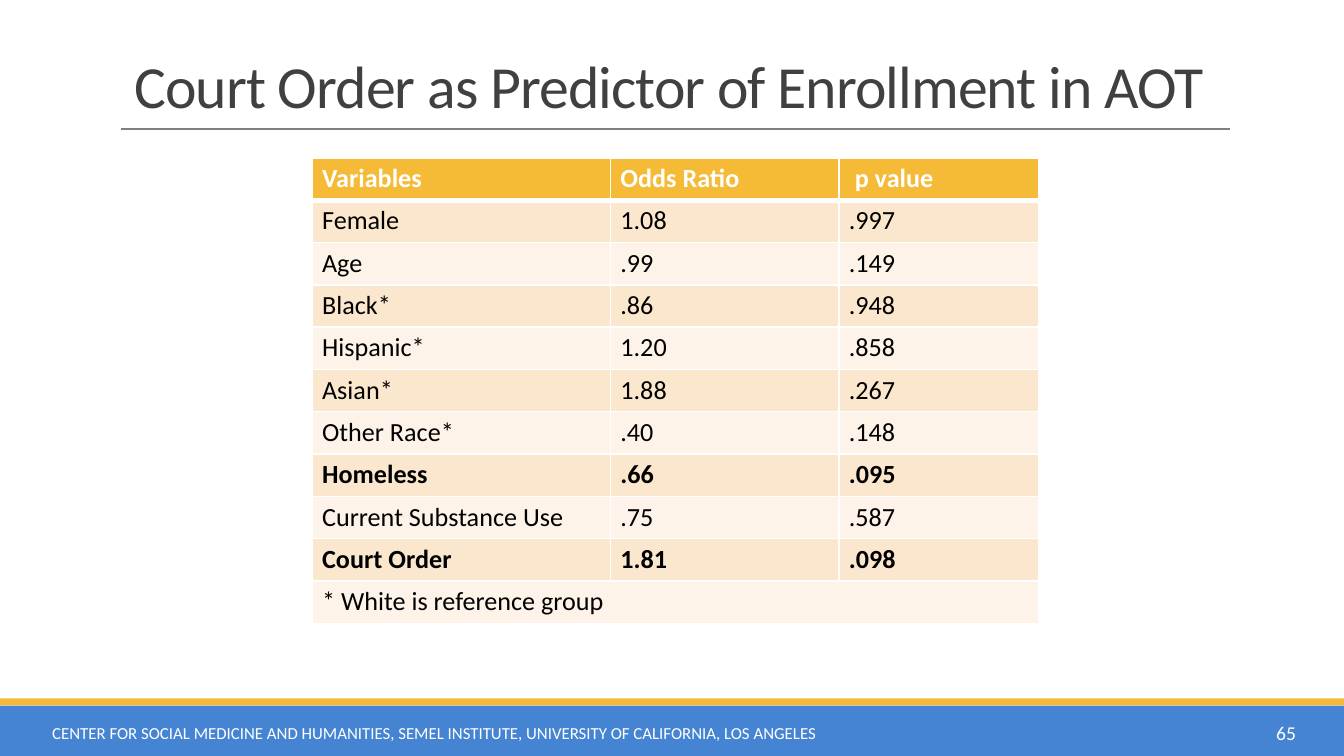
import pptx
import pptx.util
import pptx.dml.color
import pptx.enum.shapes
import pptx.enum.text
import pptx.oxml.ns
import lxml.etree

Pt = pptx.util.Pt
qn = pptx.oxml.ns.qn
ALIGN = pptx.enum.text.PP_ALIGN
ANCHOR = pptx.enum.text.MSO_ANCHOR

FONT = "Calibri"
WHITE, BLACK, GOLD = "FFFFFF", "000000", "F5BB36"
BANDS = ["FDF3E8", "FBE7CE"]
WIDTHS = [159.8, 122.4, 107.4]
ROW = 22.7
ROWS = [
    ["Variables", "Odds Ratio", " p value"],
    ["Female", "1.08", ".997"],
    ["Age", ".99", ".149"],
    ["Black*", ".86", ".948"],
    ["Hispanic*", "1.20", ".858"],
    ["Asian*", "1.88", ".267"],
    ["Other Race*", ".40", ".148"],
    ["Homeless", ".66", ".095"],
    ["Current Substance Use", ".75", ".587"],
    ["Court Order", "1.81", ".098"],
    ["* White is reference group", "", ""],
]
STRONG = {"Variables", "Homeless", "Court Order"}


def color(code):
    return pptx.dml.color.RGBColor.from_string(code)


def paint(fill, code):
    fill.solid()
    fill.fore_color.rgb = color(code)


def add_run(para, text, size, code, bold=False):
    run = para.add_run()
    run.text = text
    font = run.font
    font.name, font.size, font.bold = FONT, Pt(size), bold
    font.color.rgb = color(code)
    return run


def add_bar(slide, top, high, code):
    bar = slide.shapes.add_shape(pptx.enum.shapes.MSO_SHAPE.RECTANGLE,
                                 Pt(0), Pt(top), Pt(720), Pt(high))
    bar.shadow.inherit = False
    paint(bar.fill, code)
    bar.line.fill.background()


def add_rule(slide, left, right, top):
    rule = slide.shapes.add_connector(pptx.enum.shapes.MSO_CONNECTOR.STRAIGHT,
                                      Pt(left), Pt(top), Pt(right), Pt(top))
    rule.line.color.rgb = color("808080")
    rule.line.width = Pt(1)
    props = rule._element.spPr
    lxml.etree.SubElement(props, qn("a:effectLst"))


def set_title(slide, text):
    title = slide.shapes.title
    title.left, title.top = Pt(64.8), Pt(6.5)
    title.width, title.height = Pt(594), Pt(61.9)
    frame = title.text_frame
    frame.word_wrap = True
    frame.auto_size = pptx.enum.text.MSO_AUTO_SIZE.NONE
    frame.vertical_anchor = ANCHOR.BOTTOM
    para = frame.paragraphs[0]
    para.alignment, para.line_spacing = ALIGN.LEFT, 0.85
    run = add_run(para, text, 32, "404040")
    run.font._element.set("spc", "-50")


def add_note(slide, left, width, text, size, align):
    box = slide.shapes.add_textbox(Pt(left), Pt(381.6), Pt(width), Pt(21.6))
    frame = box.text_frame
    frame.word_wrap = True
    frame.vertical_anchor = ANCHOR.MIDDLE
    para = frame.paragraphs[0]
    para.alignment = align
    add_run(para, text, size, WHITE)


def set_edges(cell, top, low):
    # Cell borders come before the fill in the cell properties
    props = cell._tc.get_or_add_tcPr()
    sides = {"lnL": 1, "lnR": 1, "lnT": top, "lnB": low}
    for spot, (side, width) in enumerate(sides.items()):
        line = lxml.etree.Element(qn("a:" + side), w=str(Pt(width)))
        fill = lxml.etree.SubElement(line, qn("a:solidFill"))
        lxml.etree.SubElement(fill, qn("a:srgbClr"), val=WHITE)
        props.insert(spot, line)


def fill_cell(cell, text, row, bold):
    cell.margin_left = cell.margin_right = Pt(5.4)
    cell.margin_top = cell.margin_bottom = Pt(2.7)
    paint(cell.fill, BANDS[row % 2] if row else GOLD)
    set_edges(cell, 3 if row == 1 else 1, 3 if row == 0 else 1)
    add_run(cell.text_frame.paragraphs[0], text, 14,
            BLACK if row else WHITE, bold)


def add_grid(slide):
    frame = slide.shapes.add_table(len(ROWS), len(WIDTHS), Pt(167.2), Pt(84.5),
                                   Pt(sum(WIDTHS)), Pt(ROW * len(ROWS)))
    table = frame.table
    for col, width in zip(table.columns, WIDTHS):
        col.width = Pt(width)
    last = len(ROWS) - 1
    table.cell(last, 0).merge(table.cell(last, len(WIDTHS) - 1))
    for row, texts in enumerate(ROWS):
        table.rows[row].height = Pt(ROW)
        for col, text in enumerate(texts):
            cell = table.cell(row, col)
            if not cell.is_spanned:
                fill_cell(cell, text, row, texts[0] in STRONG)


def main():
    deck = pptx.Presentation()
    deck.slide_width, deck.slide_height = Pt(720), Pt(405)
    slide = deck.slides.add_slide(deck.slide_layouts[5])

    # Footer bars and title rule
    add_bar(slide, 378, 27, "4584D3")
    add_bar(slide, 374.2, 3.8, GOLD)
    add_rule(slide, 64.8, 658.8, 69.1)

    # Title and results
    set_title(slide, "Court Order as Predictor of Enrollment in AOT")
    add_grid(slide)

    # Footer text and page number
    add_note(slide, 20.9, 480.2,
             "CENTER FOR SOCIAL MEDICINE AND HUMANITIES, SEMEL INSTITUTE, "
             "UNIVERSITY OF CALIFORNIA, LOS ANGELES", 9, ALIGN.LEFT)
    add_note(slide, 623.5, 77.8, "65", 10.5, ALIGN.RIGHT)

    deck.save("out.pptx")


if __name__ == "__main__":
    main()
